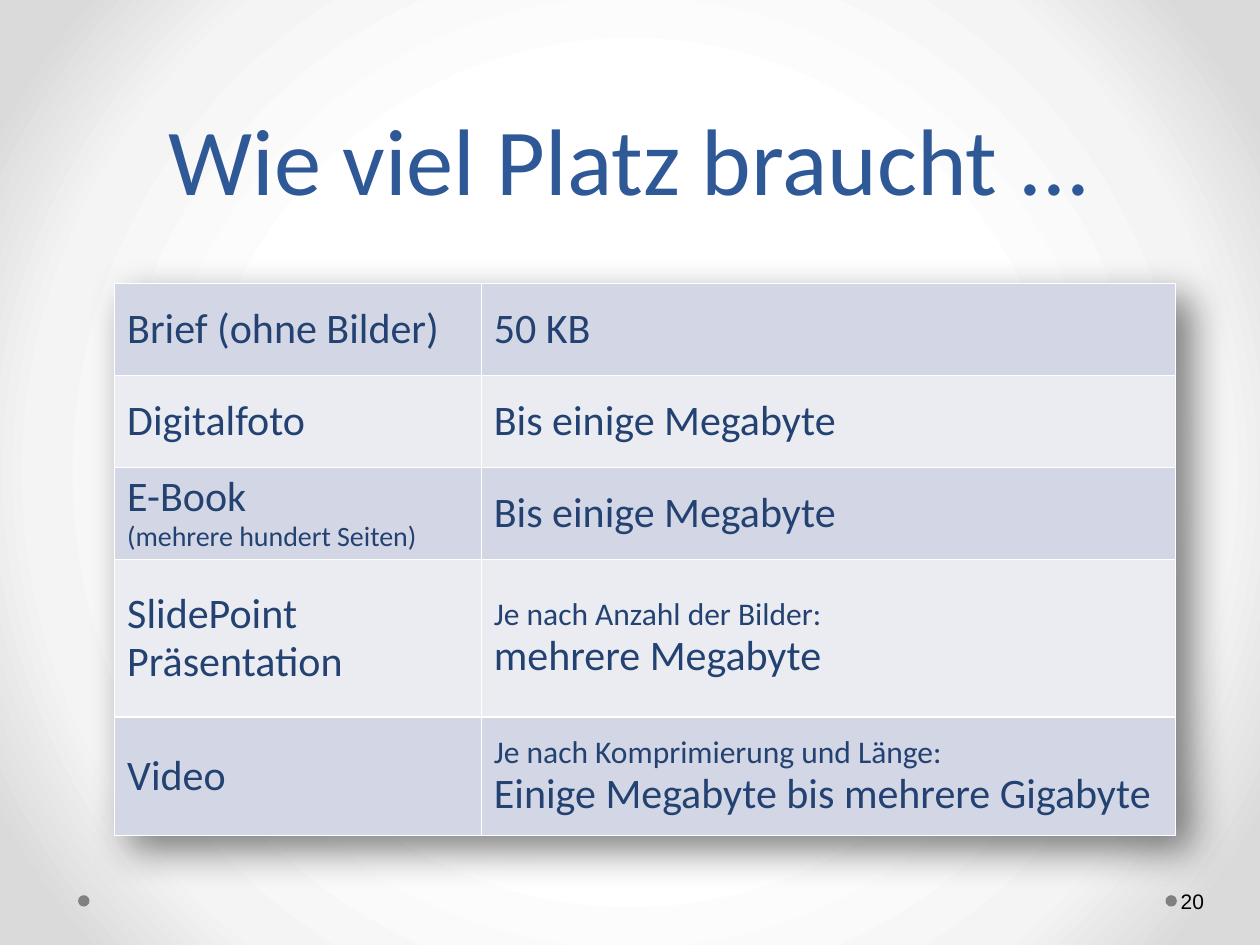
from lxml import etree
from pptx import Presentation
from pptx.dml.color import RGBColor
from pptx.enum.shapes import MSO_SHAPE
from pptx.enum.text import MSO_ANCHOR, PP_ALIGN
from pptx.oxml import parse_xml
from pptx.oxml.ns import qn
from pptx.util import Inches, Pt

OVAL = MSO_SHAPE.OVAL
BOTTOM, MIDDLE = MSO_ANCHOR.BOTTOM, MSO_ANCHOR.MIDDLE
CENTER, LEFT = PP_ALIGN.CENTER, PP_ALIGN.LEFT
NS = ('xmlns:a="http://schemas.openxmlformats.org/drawingml/2006/main" '
      'xmlns:p="http://schemas.openxmlformats.org/presentationml/2006/main"')
COLORS = {"title": "2F5897", "cell": "234271", "number": "000000", "dot": "808080",
          "odd": "D2D6E5", "even": "EAECF2", "border": "FFFFFF", "shadow": "000000"}
BACKGROUND_STOPS = [(50, "FFFFFF"), (76, "F4F4F4"), (92, "DADADA")]

SLIDE_W, SLIDE_H = Inches(10), Inches(7.5)
GRID_COLUMNS = 100
UNIT = SLIDE_W / GRID_COLUMNS

TITLE_BOX = (5, 0, 90, 17.5)
TABLE_BOX = (9.1, 22.5, 84.3, 44.1)
FOOTER_BOX = (6.2, 69.5, 93.3, 4)
COLUMN_WIDTHS = [29.1, 55.1]
ROW_HEIGHTS = [7.3, 7.3, 7.3, 12.5, 9.4]
BIG, MEDIUM, SMALL = 24, 18, 16
ROWS = [
    ([("Brief (ohne Bilder)", BIG)], [("50 KB", BIG)]),
    ([("Digitalfoto", BIG)], [("Bis einige Megabyte", BIG)]),
    ([("E-Book", BIG), ("(mehrere hundert Seiten)", SMALL)],
     [("Bis einige Megabyte", BIG)]),
    ([("SlidePoint Präsentation", BIG)],
     [("Je nach Anzahl der Bilder:", MEDIUM), ("mehrere Megabyte", BIG)]),
    ([("Video", BIG)],
     [("Je nach Komprimierung und Länge:", MEDIUM),
      ("Einige Megabyte bis mehrere Gigabyte", BIG)]),
]


def units(*values):
    return [round(v * UNIT) for v in values]


def set_all(target, values):
    for name, value in values.items():
        setattr(target, name, value)


def write_lines(tf, lines, font, color, align=LEFT, spacing=None):
    p = tf.paragraphs[0]
    set_all(p, {"alignment": align, "line_spacing": spacing})
    for i, (text, size) in enumerate(lines):
        if i:
            p.add_line_break()
        r = p.add_run()
        r.text = text
        set_all(r.font, {"name": font, "size": Pt(size)})
        r.font.color.rgb = RGBColor.from_string(COLORS[color])


def add_text(s, box, lines, font, color, align, anchor, left_inset=1):
    tf = s.shapes.add_textbox(*units(*box)).text_frame
    set_all(tf, {"word_wrap": True, "vertical_anchor": anchor,
                 "margin_left": units(left_inset)[0]})
    write_lines(tf, lines, font, color, align)


def paint_background(s):
    stops = "".join(f'<a:gs pos="{pos * 1000}"><a:srgbClr val="{color}"/></a:gs>'
                    for pos, color in BACKGROUND_STOPS)
    s.element.cSld.insert(0, parse_xml(
        f'<p:bg {NS}><p:bgPr><a:gradFill rotWithShape="1"><a:gsLst>{stops}</a:gsLst>'
        '<a:path path="circle"><a:fillToRect l="50000" t="50000" r="50000" b="50000"/>'
        '</a:path></a:gradFill><a:effectLst/></p:bgPr></p:bg>'))


def add_title(s, box):
    add_text(s, box, [("Wie viel Platz braucht ...", 54)], "Calibri", "title",
             CENTER, BOTTOM)


def format_cell(cell, lines, fill):
    cell.fill.solid()
    cell.fill.fore_color.rgb = RGBColor.from_string(COLORS[fill])
    cell.vertical_anchor = MIDDLE
    write_lines(cell.text_frame, lines, "Calibri", "cell", spacing=0.93)
    props = cell._tc.get_or_add_tcPr()
    for i, side in enumerate("LRTB"):
        props.insert(i, parse_xml(
            f'<a:ln{side} {NS} w="{Pt(1)}"><a:solidFill>'
            f'<a:srgbClr val="{COLORS["border"]}"/></a:solidFill></a:ln{side}>'))


def add_shadow(table):
    effects = etree.Element(qn("a:effectLst"))
    shadow = etree.SubElement(effects, qn("a:outerShdw"), blurRad=str(Pt(23)),
                              dist=str(Pt(12)), dir="2700000", algn="tl", rotWithShape="0")
    color = etree.SubElement(shadow, qn("a:srgbClr"), val=COLORS["shadow"])
    etree.SubElement(color, qn("a:alpha"), val="50000")
    table._tbl.tblPr.insert(0, effects)


def add_size_table(s, box):
    table = s.shapes.add_table(len(ROWS), len(COLUMN_WIDTHS), *units(*box)).table
    set_all(table, {"first_row": False, "horz_banding": False})
    for column, width in zip(table.columns, units(*COLUMN_WIDTHS)):
        column.width = width
    for row, height in zip(table.rows, units(*ROW_HEIGHTS)):
        row.height = height
    for i, contents in enumerate(ROWS):
        for j, lines in enumerate(contents):
            format_cell(table.cell(i, j), lines, "even" if i % 2 else "odd")
    add_shadow(table)


def add_footer(s, box):
    left, top, width, height = box
    dot, number_width = 0.9, 6.1
    number_left = left + width - number_width
    for x in (left, number_left - dot):
        sp = s.shapes.add_shape(OVAL, *units(x, top + (height - dot) / 2, dot, dot))
        sp.shadow.inherit = False
        sp.fill.solid()
        sp.fill.fore_color.rgb = RGBColor.from_string(COLORS["dot"])
        sp.line.fill.background()
    add_text(s, (number_left, top, number_width, height), [("20", 12)], "Arial",
             "number", LEFT, MIDDLE, left_inset=0.3)


def main():
    prs = Presentation()
    set_all(prs, {"slide_width": SLIDE_W, "slide_height": SLIDE_H})
    s = prs.slides.add_slide(prs.slide_layouts[6])
    paint_background(s)
    add_footer(s, FOOTER_BOX)
    add_title(s, TITLE_BOX)
    add_size_table(s, TABLE_BOX)
    prs.save("out.pptx")


if __name__ == "__main__":
    main()
